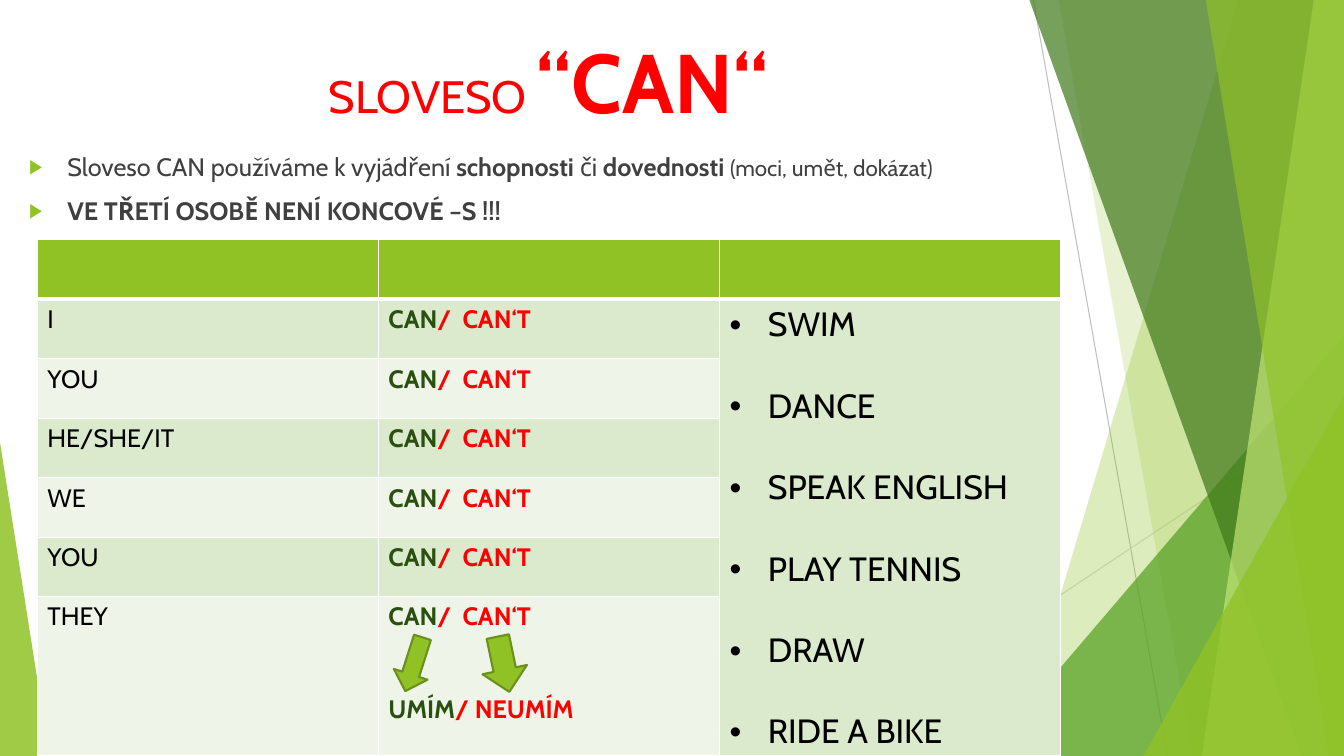
from lxml import etree
from pptx import Presentation
from pptx.dml.color import RGBColor
from pptx.enum.shapes import MSO_CONNECTOR, MSO_SHAPE
from pptx.enum.text import MSO_ANCHOR, MSO_AUTO_SIZE, PP_ALIGN
from pptx.oxml.ns import qn
from pptx.util import Inches, Pt

LINE = MSO_CONNECTOR.STRAIGHT
TRIANGLE, DOWN_ARROW = MSO_SHAPE.ISOSCELES_TRIANGLE, MSO_SHAPE.DOWN_ARROW
TOP, CENTER, NO_FIT = MSO_ANCHOR.TOP, PP_ALIGN.CENTER, MSO_AUTO_SIZE.NONE
FONT = "Cabin"
WIDTH, HEIGHT = 13.33, 7.5
GREEN, DARK_GREEN, RED = "90C226", "2A5010", "FF0000"
GRAY, BLACK, WHITE = "404040", "000000", "FFFFFF"
BANDS = ("DBE9CD", "EEF4E8")

PRONOUNS = ["I", "YOU", "HE/SHE/IT", "WE", "YOU", "THEY"]
ACTIVITIES = ["SWIM", "DANCE", "SPEAK ENGLISH", "PLAY TENNIS", "DRAW", "RIDE A BIKE"]


def color(value):
    return RGBColor.from_string(value)


def set_fill(item, value, alpha=100):
    item.fill.solid()
    item.fill.fore_color.rgb = color(value)
    if alpha < 100:
        clr = item._element.spPr.find(qn("a:solidFill"))[0]
        etree.SubElement(clr, qn("a:alpha"), val=str(alpha * 1000))


def add_run(p, text, size, value, bold=False):
    r = p.add_run()
    r.text = text
    r.font.name = FONT
    r.font.size = Pt(size)
    r.font.bold = bold
    r.font.color.rgb = color(value)


def set_bullet(p, char, value=None, percent=100):
    pPr = p._p.get_or_add_pPr()
    pPr.set("marL", str(Inches(0.38)))
    pPr.set("indent", str(-Inches(0.38)))
    if value:
        clr = etree.SubElement(pPr, qn("a:buClr"))
        etree.SubElement(clr, qn("a:srgbClr"), val=value)
    etree.SubElement(pPr, qn("a:buSzPct"), val=str(percent * 1000))
    etree.SubElement(pPr, qn("a:buFont"), typeface="Arial")
    etree.SubElement(pPr, qn("a:buChar"), char=char)


def set_borders(cell, bottom):
    tcPr = cell._tc.get_or_add_tcPr()
    for i, (side, width) in enumerate(zip("LRTB", (1, 1, 1, bottom))):
        ln = etree.Element(qn(f"a:ln{side}"), w=str(Pt(width)))
        fill = etree.SubElement(ln, qn("a:solidFill"))
        etree.SubElement(fill, qn("a:srgbClr"), val=WHITE)
        tcPr.insert(i, ln)


def add_line(s, x1, y1, x2, y2, value):
    line = s.shapes.add_connector(LINE, Inches(x1), Inches(y1), Inches(x2), Inches(y2))
    line.line.color.rgb = color(value)
    line.line.width = Pt(0.75)
    etree.SubElement(line._element.spPr, qn("a:effectLst"))


def add_facet(s, top_x, bottom_x, value, alpha):
    """Band from a slanted left edge to the right side of the slide."""
    builder = s.shapes.build_freeform(Inches(top_x), 0)
    corners = [(WIDTH, 0), (WIDTH, HEIGHT), (bottom_x, HEIGHT)]
    builder.add_line_segments([(Inches(x), Inches(y)) for x, y in corners])
    sp = builder.convert_to_shape()
    sp.shadow.inherit = False
    set_fill(sp, value, alpha)
    sp.line.fill.background()


def add_triangle(s, x, w, h, tip, value, alpha):
    sp = s.shapes.add_shape(TRIANGLE, Inches(x), Inches(HEIGHT - h), Inches(w), Inches(h))
    sp.adjustments[0] = tip
    sp.shadow.inherit = False
    set_fill(sp, value, alpha)
    sp.line.fill.background()


def add_background(s):
    add_line(s, 10.25, 0, 11.58, HEIGHT, "BFBFBF")
    add_line(s, WIDTH, 4.03, 8.12, HEIGHT, "D9D9D9")
    add_facet(s, 12.28, 10.04, GREEN, 30)
    add_facet(s, 10.5, 11.83, GREEN, 20)
    add_triangle(s, 9.77, 3.56, 4.17, 1, "54A021", 72)
    add_facet(s, 10.21, 12.91, "3F7819", 70)
    add_facet(s, 13.03, 11.92, "C0E474", 70)
    add_facet(s, 11.96, 13.18, GREEN, 65)
    add_triangle(s, 11.34, 1.99, 3.57, 1, GREEN, 80)
    add_triangle(s, 0, 0.49, 3.11, 0, GREEN, 85)


def add_title(s, x, y, w, h):
    title = s.shapes.title
    title.left, title.top, title.width, title.height = map(Inches, (x, y, w, h))
    tf = title.text_frame
    tf.auto_size = NO_FIT
    tf.vertical_anchor = TOP
    p = tf.paragraphs[0]
    p.alignment = CENTER
    add_run(p, "SLOVESO ", 32.4, RED)
    add_run(p, "“CAN“", 59.4, RED, True)


def add_rules(s, x, y, w, h):
    tf = s.shapes.add_textbox(Inches(x), Inches(y), Inches(w), Inches(h)).text_frame
    tf.word_wrap = True
    usage, third_person = tf.paragraphs[0], tf.add_paragraph()
    for p in (usage, third_person):
        p.space_before = Pt(10)
        set_bullet(p, "▶", GREEN, 80)
    add_run(usage, "Sloveso CAN používáme k vyjádření ", 18, GRAY)
    add_run(usage, "schopnosti", 18, GRAY, True)
    add_run(usage, " či ", 18, GRAY)
    add_run(usage, "dovednosti ", 18, GRAY, True)
    add_run(usage, "(moci, umět, dokázat)", 16, GRAY)
    add_run(third_person, "VE TŘETÍ OSOBĚ NENÍ KONCOVÉ –S !!!", 18, GRAY, True)


def add_can_table(s, x, y, w, h):
    rows = len(PRONOUNS) + 1
    row_h = 0.59
    table = s.shapes.add_table(rows, 3, Inches(x), Inches(y), Inches(w), Inches(h)).table
    for i, row in enumerate(table.rows):
        row.height = Inches(row_h if i < rows - 1 else h - row_h * (rows - 1))
        for cell in row.cells:
            set_fill(cell, BANDS[(i - 1) % 2] if i else GREEN)
            set_borders(cell, 1 if i else 3)

    # Pronouns and verb forms
    for i, pronoun in enumerate(PRONOUNS, 1):
        add_run(table.cell(i, 0).text_frame.paragraphs[0], pronoun, 18, BLACK)
        p = table.cell(i, 1).text_frame.paragraphs[0]
        add_run(p, "CAN", 18, DARK_GREEN, True)
        add_run(p, "/  CAN‘T", 18, RED, True)
    p = table.cell(rows - 1, 1).text_frame.add_paragraph()
    p.space_before = Pt(44)
    add_run(p, "UMÍM", 18, DARK_GREEN, True)
    add_run(p, "/ NEUMÍM", 18, RED, True)

    # Activities
    table.cell(1, 2).merge(table.cell(rows - 1, 2))
    tf = table.cell(1, 2).text_frame
    for i, activity in enumerate(ACTIVITIES):
        p = tf.add_paragraph() if i else tf.paragraphs[0]
        p.space_before = Pt(29 if i else 0)
        set_bullet(p, "•")
        add_run(p, activity, 24, BLACK)


def add_arrow(s, x, y, w, h, rotation):
    sp = s.shapes.add_shape(DOWN_ARROW, Inches(x), Inches(y), Inches(w), Inches(h))
    sp.rotation = rotation
    sp.shadow.inherit = False
    set_fill(sp, GREEN)
    sp.line.color.rgb = color("6B901C")
    sp.line.width = Pt(1.5)


def main():
    prs = Presentation()
    prs.slide_width, prs.slide_height = Inches(WIDTH), Inches(HEIGHT)
    s = prs.slides.add_slide(prs.slide_layouts.get_by_name("Title Only"))
    add_background(s)
    add_title(s, 0.74, 0.25, 9.4, 1.05)
    add_rules(s, 0.19, 1.45, 10.49, 0.92)
    add_can_table(s, 0.37, 2.38, 10.15, 5.12)
    add_arrow(s, 4.77, 6.31, 0.45, 0.56, 348.2)
    add_arrow(s, 3.93, 6.31, 0.35, 0.56, 17.7)
    prs.save("out.pptx")


if __name__ == "__main__":
    main()
